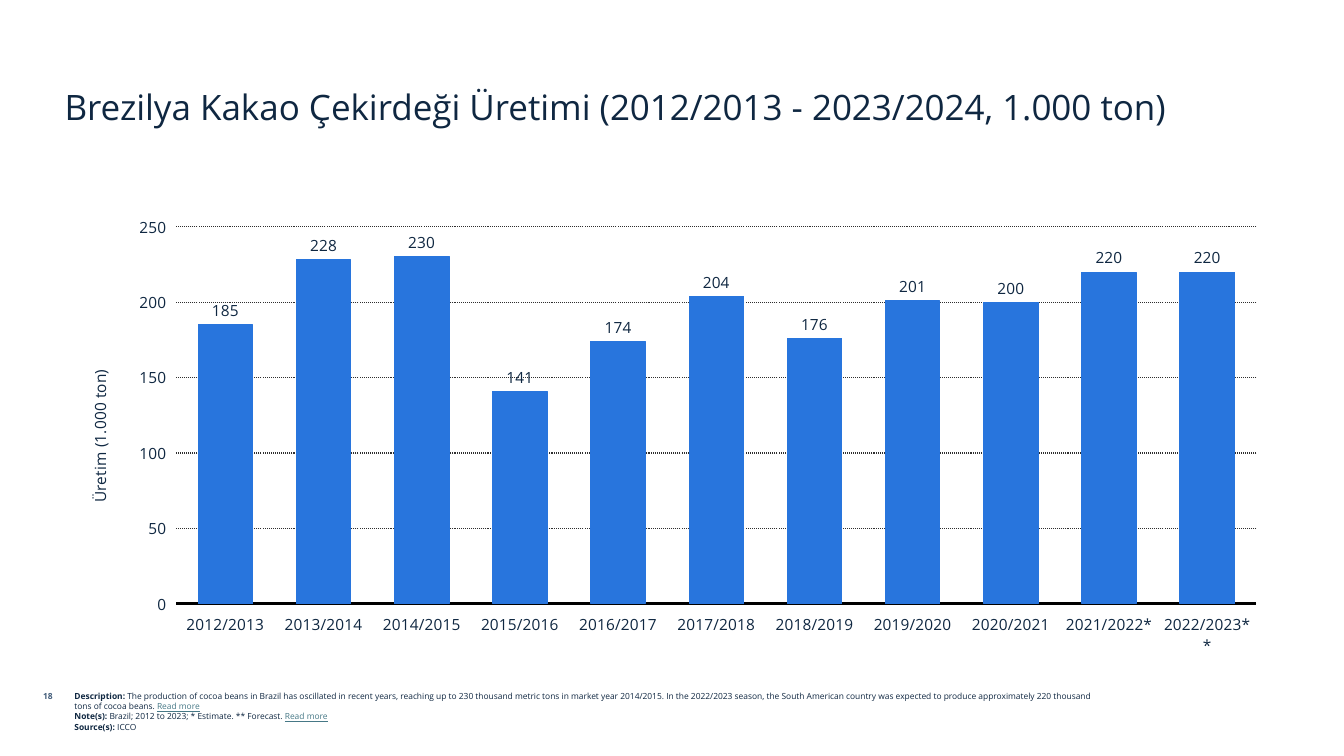
"""Build a slide with a column chart of Brazilian cocoa bean production."""
from lxml import etree
from pptx import Presentation
from pptx import util as u
from pptx.chart import data
from pptx.dml.color import RGBColor
from pptx.enum import chart as ch, dml, text

WIDTH, HEIGHT = u.Inches(13.33), u.Inches(7.5)
NAVY = RGBColor(0x0F, 0x27, 0x41)
SLATE = RGBColor(0x45, 0x5F, 0x7C)
LINK = RGBColor(0x46, 0x78, 0x86)
BLUE = RGBColor(0x28, 0x75, 0xDD)
BLACK = RGBColor(0, 0, 0)
GRID = RGBColor(0x2F, 0x2F, 0x2F)
FONT = "Open Sans"

LEFT = 0.64
FOOT_TOP = 6.81
TITLE = "Brezilya Kakao Çekirdeği Üretimi (2012/2013 - 2023/2024, 1.000 ton)"
PRODUCTION = [185, 228, 230, 141, 174, 204, 176, 201, 200, 220, 220]
MARKS = {2021: "*", 2022: "**"}
PLOT = {"x": 0.092, "y": 0.042, "w": 0.889, "h": 0.824}
NOTES = [
    ("Description: ",
     "The production of cocoa beans in Brazil has oscillated in recent years, "
     "reaching up to 230 thousand metric tons in market year 2014/2015. In the "
     "2022/2023 season, the South American country was expected to produce "
     "approximately 220 thousand tons of cocoa beans. ", "Read more"),
    ("Note(s): ", "Brazil; 2012 to 2023; * Estimate. ** Forecast. ", "Read more"),
    ("Source(s): ", "ICCO", ""),
]


def inches(*lengths):
    """Convert lengths to inches."""
    return [u.Inches(length) for length in lengths]


def style_font(font, size, color=NAVY, bold=False, name=FONT):
    """Set the look of a font."""
    font.name, font.size, font.bold = name, u.Pt(size), bold
    font.color.rgb = color


def add_run(p, content, size, color=NAVY, bold=False, underline=False):
    """Append one formatted run to a paragraph."""
    r = p.add_run()
    r.text = content
    style_font(r.font, size, color, bold)
    r.font.underline = underline


def add_box(s, *place):
    """Add a wrapping text box and return its text frame."""
    tf = s.shapes.add_textbox(*inches(*place)).text_frame
    tf.word_wrap = True
    return tf


def add_title(s):
    """Place and fill the title placeholder."""
    sp = s.shapes.title
    sp.left, sp.top, sp.width, sp.height = inches(0.54, 0.46, 12.24, 0.86)
    tf = sp.text_frame
    tf.word_wrap = True
    tf.auto_size = text.MSO_AUTO_SIZE.NONE
    tf.vertical_anchor = text.MSO_ANCHOR.BOTTOM
    p = tf.paragraphs[0]
    p.alignment = text.PP_ALIGN.LEFT
    add_run(p, TITLE, 25)


def add_notes(s):
    """Add the description, note and source lines."""
    tf = add_box(s, LEFT, FOOT_TOP, 10.47, 0.58)
    for i, (label, body, link) in enumerate(NOTES):
        p = tf.add_paragraph() if i else tf.paragraphs[0]
        add_run(p, label, 6, bold=True)
        add_run(p, body, 6)
        if link:
            add_run(p, link, 6, LINK, underline=True)


def add_page_number(s):
    """Add the page number."""
    p = add_box(s, -0.1, FOOT_TOP, 0.72, 0.3).paragraphs[0]
    p.alignment = text.PP_ALIGN.RIGHT
    add_run(p, "18", 6, SLATE, bold=True)


def style_axis(axis):
    """Apply the settings that both axes share."""
    axis.major_tick_mark = axis.minor_tick_mark = ch.XL_TICK_MARK.NONE
    axis.tick_label_position = ch.XL_TICK_LABEL_POSITION.LOW
    style_font(axis.tick_labels.font, 11)


def style_value_axis(axis):
    """Set the scale, gridlines and title of the value axis."""
    style_axis(axis)
    axis.minimum_scale, axis.maximum_scale, axis.major_unit = 0, 250, 50
    axis.tick_labels.number_format = "#,##0"
    axis.tick_labels.number_format_is_linked = False
    axis.format.line.fill.background()
    line = axis.major_gridlines.format.line
    line.color.rgb, line.width = GRID, u.Pt(0.75)
    line.dash_style = dml.MSO_LINE.ROUND_DOT
    add_run(axis.axis_title.text_frame.paragraphs[0], "Üretim (1.000 ton)", 11)


def set_plot_area(chart):
    """Fix the inner plot area as shares of the chart."""
    area = chart.plots[0]._element.getparent()
    ns = area.nsmap["c"]
    for old in area.findall(f"{{{ns}}}layout"):
        area.remove(old)
    layout = etree.Element(f"{{{ns}}}layout")
    manual = etree.SubElement(layout, f"{{{ns}}}manualLayout")
    settings = {"layoutTarget": "inner", "xMode": "edge", "yMode": "edge", **PLOT}
    for tag, value in settings.items():
        etree.SubElement(manual, f"{{{ns}}}{tag}", val=str(value))
    area.insert(0, layout)


def add_production_chart(s):
    """Add the column chart of yearly production."""
    values = data.CategoryChartData(number_format="General")
    values.categories = [f"{y}/{y + 1}{MARKS.get(y, '')}"
                         for y in range(2012, 2012 + len(PRODUCTION))]
    values.add_series("Series 1", PRODUCTION)
    chart = s.shapes.add_chart(ch.XL_CHART_TYPE.COLUMN_CLUSTERED,
                               *inches(LEFT, 2.06, 12.05, 4.54), values).chart
    chart.has_title = chart.has_legend = False
    style_font(chart.font, 18, BLACK, name="Lato")

    style_axis(chart.category_axis)
    base = chart.category_axis.format.line
    base.color.rgb, base.width = BLACK, u.Pt(2)
    style_value_axis(chart.value_axis)

    plot = chart.plots[0]
    plot.gap_width, plot.overlap, plot.vary_by_categories = 80, -30, False
    series = plot.series[0]
    series.format.fill.solid()
    series.format.fill.fore_color.rgb = BLUE
    series.format.line.color.rgb = BLUE
    series.format.line.width = u.Pt(0.75)
    labels = series.data_labels
    labels.show_value = True
    labels.position = ch.XL_LABEL_POSITION.OUTSIDE_END
    style_font(labels.font, 11)
    set_plot_area(chart)


def main():
    """Build and save the slide."""
    prs = Presentation()
    prs.slide_width, prs.slide_height = WIDTH, HEIGHT
    s = prs.slides.add_slide(prs.slide_layouts.get_by_name("Title Only"))
    add_notes(s)
    add_production_chart(s)
    add_page_number(s)
    add_title(s)
    prs.save("out.pptx")


if __name__ == "__main__":
    main()
